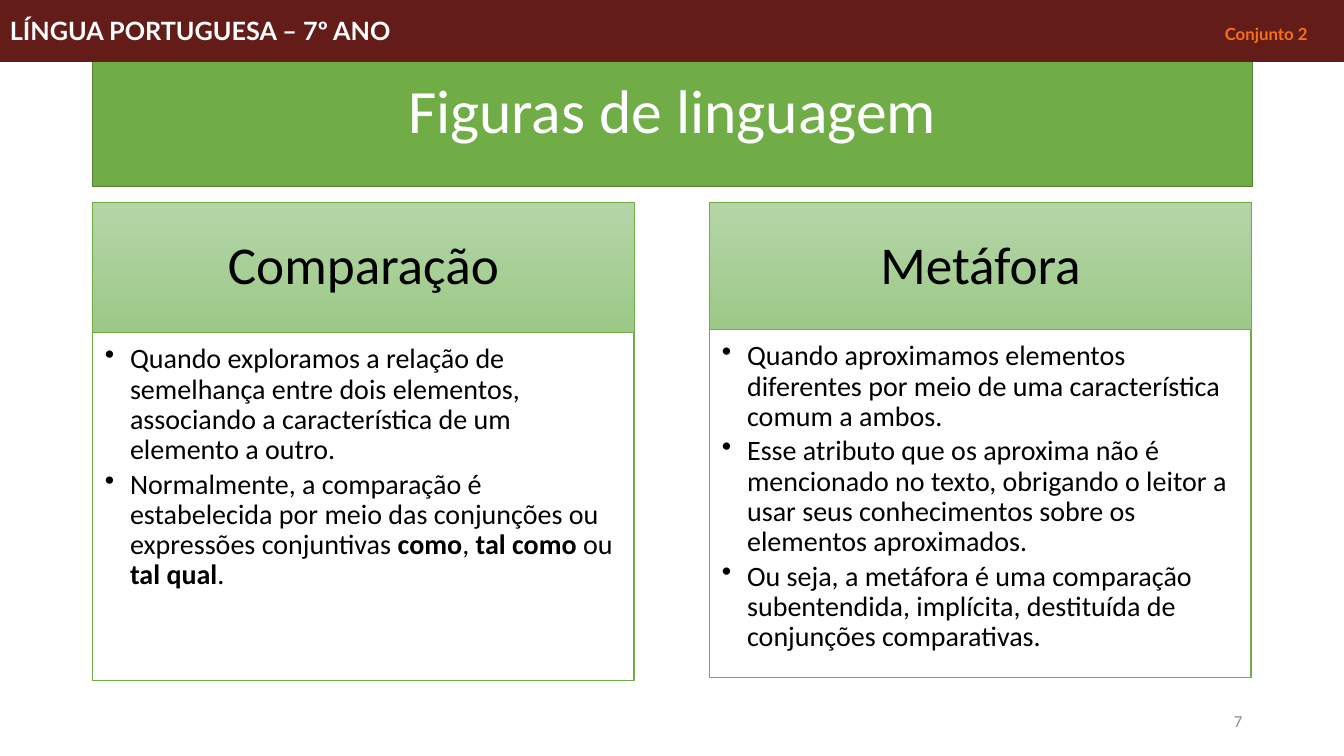
from dataclasses import dataclass

from lxml.etree import SubElement
from pptx import Presentation
from pptx.dml.color import RGBColor
from pptx.enum.shapes import MSO_SHAPE
from pptx.enum.text import MSO_ANCHOR, MSO_AUTO_SIZE, PP_ALIGN
from pptx.oxml.ns import qn
from pptx.shapes.autoshape import Shape
from pptx.slide import Slide
from pptx.util import Inches, Pt

COLORS = {
    "white": "FFFFFF",
    "black": "000000",
    "green": "70AD47",
    "dark_green": "538035",
    "light_top": "B5D5A7",
    "light_bottom": "9CC987",
    "maroon": "631C18",
    "orange": "F47116",
    "gray": "8C8C8C",
}
PANEL_WIDTH = 5.37
PANEL_TOP = 2.01
CAPTION_HEIGHT = 1.29
BODY_HEIGHT = 3.45


@dataclass(frozen=True)
class Run:
    text: str
    bold: bool = False
    size: float | None = None
    color: str | None = None


@dataclass(frozen=True)
class Panel:
    left: float
    body_top: float
    caption: str
    bullets: list[list[Run]]


PANELS = [
    Panel(0.92, 3.3, "Comparação", [
        [Run("Quando exploramos a relação de semelhança entre dois elementos, "
             "associando a característica de um elemento a outro.")],
        [Run("Normalmente, a comparação é estabelecida por meio das conjunções "
             "ou expressões conjuntivas "),
         Run("como", bold=True), Run(", "), Run("tal como ", bold=True),
         Run("ou"), Run(" tal qual", bold=True), Run(".")],
    ]),
    Panel(7.04, 3.27, "Metáfora", [
        [Run("Quando aproximamos elementos diferentes por meio de uma "
             "característica comum a ambos.")],
        [Run("Esse atributo que os aproxima não é mencionado no texto, obrigando "
             "o leitor a usar seus conhecimentos sobre os elementos aproximados.")],
        [Run("Ou seja, a metáfora é uma comparação subentendida, implícita, "
             "destituída de conjunções comparativas.")],
    ]),
]


def rgb(name: str) -> RGBColor:
    return RGBColor.from_string(COLORS[name])


def write(shape: Shape, paragraphs: list[list[Run]], *, size: float,
          color: str = "black", font: str = "Calibri",
          align: PP_ALIGN = PP_ALIGN.LEFT, anchor: MSO_ANCHOR = MSO_ANCHOR.MIDDLE,
          line_spacing: float = 1.0, space_after: float = 0, bullet: bool = False,
          tab_stop: float | None = None,
          insets: tuple[float, float, float, float] = (0.1, 0.05, 0.1, 0.05)) -> None:
    """Fill a shape with paragraphs; a run's own size and color take precedence."""
    frame = shape.text_frame
    frame.word_wrap = True
    frame.auto_size = MSO_AUTO_SIZE.NONE
    frame.vertical_anchor = anchor
    (frame.margin_left, frame.margin_top,
     frame.margin_right, frame.margin_bottom) = map(Inches, insets)
    for index, runs in enumerate(paragraphs):
        paragraph = frame.add_paragraph() if index else frame.paragraphs[0]
        paragraph.alignment = align
        paragraph.line_spacing = line_spacing
        paragraph.space_after = Pt(space_after)
        properties = paragraph._p.get_or_add_pPr()
        if bullet:
            properties.set("marL", str(Inches(0.25)))
            properties.set("indent", str(Inches(-0.25)))
            SubElement(properties, qn("a:buChar"), char="•")
        if tab_stop is not None:
            tabs = SubElement(properties, qn("a:tabLst"))
            SubElement(tabs, qn("a:tab"), pos=str(Inches(tab_stop)), algn="l")
        for part in runs:
            run = paragraph.add_run()
            run.text = part.text
            run.font.name = font
            run.font.size = Pt(part.size or size)
            run.font.bold = part.bold
            run.font.color.rgb = rgb(part.color or color)


def paint(shape: Shape, fill: str, line: str, line_width: float) -> None:
    shape.fill.solid()
    shape.fill.fore_color.rgb = rgb(fill)
    shape.line.color.rgb = rgb(line)
    shape.line.width = Pt(line_width)


def add_box(slide: Slide, left: float, top: float, width: float, height: float, *,
            fill: str, line: str, line_width: float) -> Shape:
    box = slide.shapes.add_shape(MSO_SHAPE.RECTANGLE, Inches(left), Inches(top),
                                 Inches(width), Inches(height))
    box.shadow.inherit = False
    paint(box, fill, line, line_width)
    return box


def add_title(slide: Slide) -> None:
    title = slide.shapes.title
    title.left, title.top = Inches(0.92), Inches(0.4)
    title.width, title.height = Inches(11.5), Inches(1.45)
    paint(title, "green", "dark_green", 1)
    write(title, [[Run("Figuras de linguagem")]], size=44, color="white",
          align=PP_ALIGN.CENTER, line_spacing=0.9)


def add_panel(slide: Slide, panel: Panel) -> None:
    caption = add_box(slide, panel.left, PANEL_TOP, PANEL_WIDTH, CAPTION_HEIGHT,
                      fill="light_top", line="green", line_width=0.5)
    caption.fill.gradient()
    caption.fill.gradient_angle = 270
    for stop, shade in zip(caption.fill.gradient_stops, ("light_top", "light_bottom")):
        stop.color.rgb = rgb(shade)
    write(caption, [[Run(panel.caption)]], size=38, align=PP_ALIGN.CENTER,
          line_spacing=0.9, insets=(0.3, 0.17, 0.3, 0.17))

    body = add_box(slide, panel.left, panel.body_top, PANEL_WIDTH, BODY_HEIGHT,
                   fill="white", line="green", line_width=1)
    write(body, panel.bullets, size=20, anchor=MSO_ANCHOR.TOP, line_spacing=0.9,
          space_after=3, bullet=True, insets=(0.12, 0.12, 0.16, 0.17))


def add_page_number(slide: Slide) -> None:
    page_number = slide.shapes.add_textbox(Inches(9.42), Inches(6.95),
                                           Inches(3), Inches(0.4))
    write(page_number, [[Run("7")]], size=12, color="gray", align=PP_ALIGN.RIGHT)


def add_header(slide: Slide) -> None:
    header = add_box(slide, 0, 0, 13.33, 0.61,
                     fill="maroon", line="maroon", line_width=0.75)
    write(header, [[Run("LÍNGUA PORTUGUESA – 7º ANO\t", bold=True),
                    Run("Conjunto 2", bold=True, size=12, color="orange")]],
          size=18, color="white", font="Lato", tab_stop=12.05)


def main() -> None:
    presentation = Presentation()
    presentation.slide_width = Inches(13.33)
    presentation.slide_height = Inches(7.5)
    slide = presentation.slides.add_slide(presentation.slide_layouts[5])
    add_title(slide)
    for panel in PANELS:
        add_panel(slide, panel)
    add_page_number(slide)
    add_header(slide)
    presentation.save("out.pptx")


if __name__ == "__main__":
    main()
